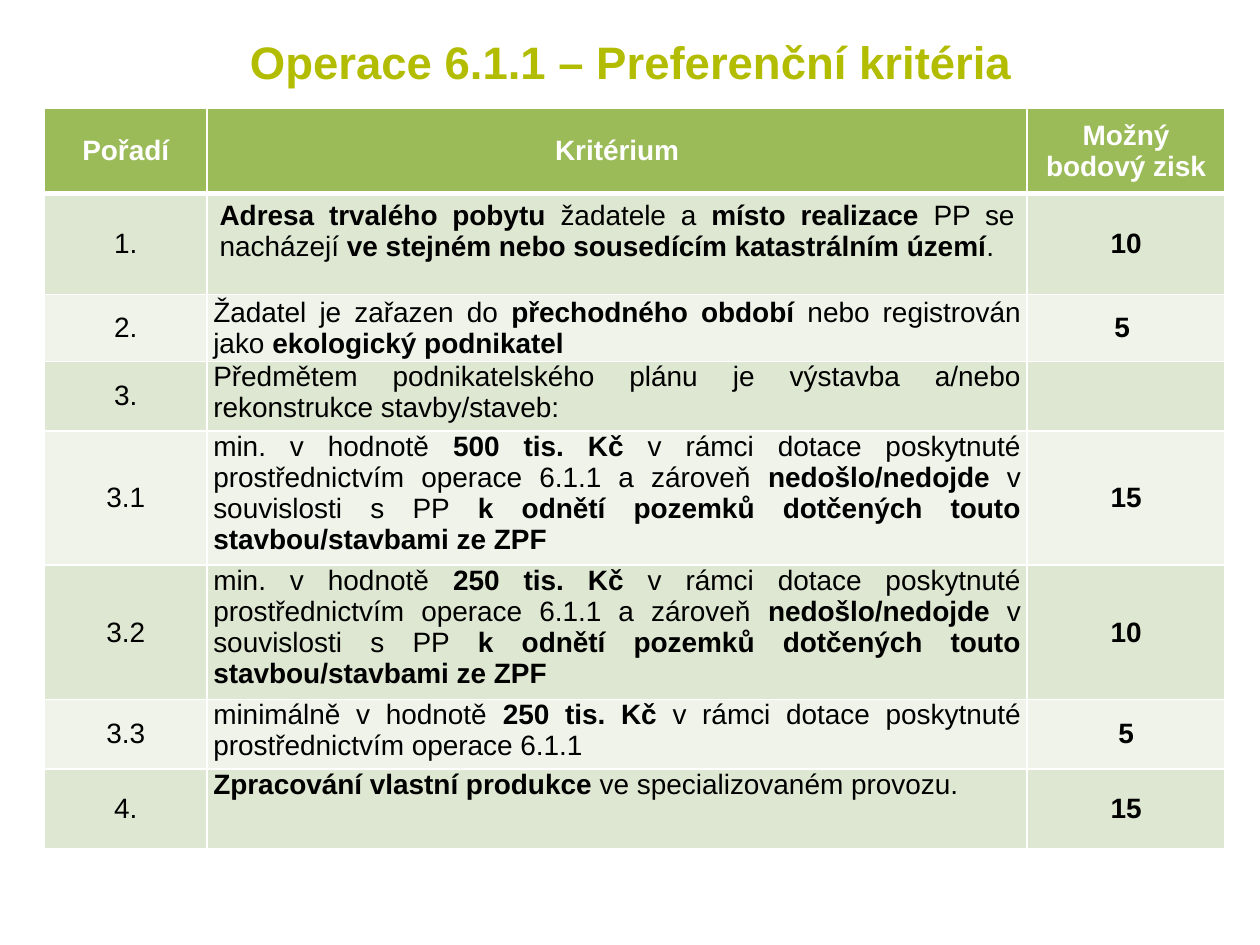
from pptx import Presentation
from pptx.dml.color import RGBColor
from pptx.enum.text import MSO_ANCHOR as Anchor, PP_ALIGN as Align
from pptx.oxml import parse_xml
from pptx.oxml.ns import nsdecls
from pptx.util import Pt

FONT = "Arial"
WHITE, BLACK, LIME = "FFFFFF", "000000", "B2BC00"
HEADER_FILL, BAND_FILLS = "9BBB59", ("DEE7D1", "EFF3EA")

TITLE = "Operace 6.1.1 – Preferenční kritéria"
HEADINGS = ("Pořadí", "Kritérium", "Možný bodový zisk")
COLUMN_WIDTHS = (92.9, 468.7, 113)
HEADER_HEIGHT = 48.6
ROOMY, TIGHT = (7.2, 3.6), (3.6, 0)  # side and top/bottom cell margins


def building_text(amount):
    return (f"min. v hodnotě **{amount} tis. Kč** v rámci dotace poskytnuté "
            "prostřednictvím operace 6.1.1 a zároveň **nedošlo/nedojde** "
            "v souvislosti s PP **k odnětí pozemků dotčených touto "
            "stavbou/stavbami ze ZPF**")


# Order, criterion (bold between ** marks), points, row height, anchor, margins
CRITERIA = (
    ("1.", "**Adresa trvalého pobytu** žadatele a **místo realizace** PP se nacházejí "
           "**ve stejném nebo sousedícím katastrálním území**.",
     "10", 57.6, Anchor.TOP, ROOMY),
    ("2.", "Žadatel je zařazen do **přechodného období** nebo registrován jako "
           "**ekologický podnikatel**",
     "5 ", 37.2, Anchor.MIDDLE, TIGHT),
    ("3.", "Předmětem podnikatelského plánu je výstavba a/nebo rekonstrukce "
           "stavby/staveb:",
     "", 39.6, Anchor.TOP, TIGHT),
    ("3.1", building_text(500), "15", 71, Anchor.TOP, TIGHT),
    ("3.2", building_text(250), "10", 71, Anchor.TOP, TIGHT),
    ("3.3", "minimálně v hodnotě **250 tis. Kč** v rámci dotace poskytnuté "
            "prostřednictvím operace 6.1.1",
     "5", 39.6, Anchor.TOP, TIGHT),
    ("4.", "**Zpracování vlastní produkce** ve specializovaném provozu.",
     "15", 45.4, Anchor.TOP, TIGHT),
)


def color(value):
    return RGBColor.from_string(value)


def apply(target, formats):
    for name, value in formats.items():
        setattr(target, name, value)


def write(para, text, size, ink, align):
    """Fill a paragraph; text between ** marks is bold."""
    para.alignment = align
    para.font.size = Pt(size)
    for index, part in enumerate(text.split("**")):
        if part:
            span = para.add_run()
            span.text = part
            apply(span.font, {"name": FONT, "size": Pt(size), "bold": index % 2 == 1})
            span.font.color.rgb = color(ink)


def add_borders(cell, bottom):
    properties = cell._tc.get_or_add_tcPr()
    for side, width in (("L", 1), ("R", 1), ("T", 1), ("B", bottom)):
        properties.append(parse_xml(
            f'<a:ln{side} {nsdecls("a")} w="{Pt(width)}"><a:solidFill>'
            f'<a:srgbClr val="{WHITE}"/></a:solidFill></a:ln{side}>'))


def format_cell(cell, text, fill, ink=BLACK, align=Align.CENTER,
                anchor=Anchor.MIDDLE, margins=TIGHT, bottom=1):
    side, edge = map(Pt, margins)
    apply(cell, {"margin_left": side, "margin_right": side, "margin_top": edge,
                 "margin_bottom": edge, "vertical_anchor": anchor})
    add_borders(cell, bottom)
    cell.fill.solid()
    cell.fill.fore_color.rgb = color(fill)
    write(cell.text_frame.paragraphs[0], text, 16, ink, align)


def add_title(page, left, top, width, height):
    box = page.shapes.add_textbox(Pt(left), Pt(top), Pt(width), Pt(height))
    apply(box.text_frame, {"word_wrap": True, "vertical_anchor": Anchor.MIDDLE})
    write(box.text_frame.paragraphs[0], f"**{TITLE}**", 26, LIME, Align.CENTER)


def add_criteria_table(page, left, top):
    heights = [HEADER_HEIGHT] + [row[3] for row in CRITERIA]
    table = page.shapes.add_table(
        len(heights), len(COLUMN_WIDTHS), Pt(left), Pt(top),
        Pt(sum(COLUMN_WIDTHS)), Pt(sum(heights))).table
    for column, width in zip(table.columns, COLUMN_WIDTHS):
        column.width = Pt(width)
    for row, height in zip(table.rows, heights):
        row.height = Pt(height)

    # Header row
    for index, heading in enumerate(HEADINGS):
        format_cell(table.cell(0, index), f"**{heading}**", HEADER_FILL, WHITE,
                    margins=ROOMY, bottom=3)

    # Banded criteria rows
    for index, (order, criterion, points, _, anchor, margins) in enumerate(CRITERIA):
        fill = BAND_FILLS[index % 2]
        order_cell, criterion_cell, points_cell = table.rows[index + 1].cells
        format_cell(order_cell, order, fill, margins=margins)
        format_cell(criterion_cell, criterion, fill, align=Align.JUSTIFY,
                    anchor=anchor, margins=margins)
        format_cell(points_cell, f"**{points}**", fill, margins=margins)


def main():
    deck = Presentation()
    apply(deck, {"slide_width": Pt(720), "slide_height": Pt(540)})
    page = deck.slides.add_slide(deck.slide_layouts[6])
    add_title(page, 36.7, 9.4, 648, 51)
    add_criteria_table(page, 25.4, 62)
    deck.save("out.pptx")


if __name__ == "__main__":
    main()
